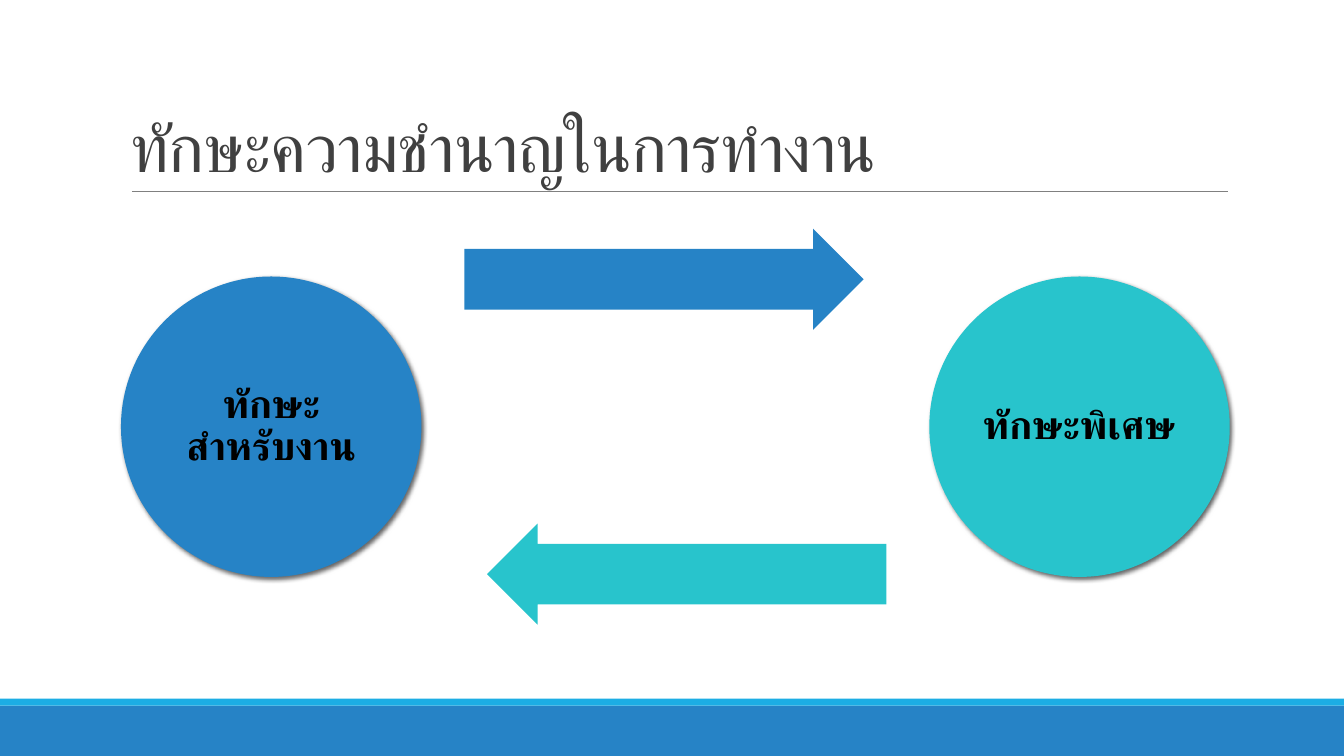
import pptx
import pptx.util
from lxml import etree
from pptx.dml.color import RGBColor
from pptx.enum.shapes import MSO_CONNECTOR, MSO_SHAPE
from pptx.enum.text import MSO_ANCHOR, PP_ALIGN
from pptx.oxml.ns import qn

Pt = pptx.util.Pt
COLORS = {
    "blue": "2683C6",
    "sky": "1CADE4",
    "teal": "28C4CC",
    "rule": "808080",
    "title": "404040",
    "label": "000000",
    "shadow": "000000",
}
WIDTH, HEIGHT = 960, 540


def rgb(name):
    return RGBColor.from_string(COLORS[name])


def add_filled(s, kind, color, x, y, w, h):
    sp = s.shapes.add_shape(kind, Pt(x), Pt(y), Pt(w), Pt(h))
    sp.shadow.inherit = False
    sp.fill.solid()
    sp.fill.fore_color.rgb = rgb(color)
    sp.line.fill.background()
    return sp


def set_text(sp, text, size, color, spacing, anchor):
    tf = sp.text_frame
    tf.word_wrap = True
    tf.vertical_anchor = anchor
    p = tf.paragraphs[0]
    p.text = text
    p.line_spacing = spacing
    p.font.name = "Calibri"
    p.font.size = Pt(size)
    p.font.color.rgb = rgb(color)
    return tf, p


def add_shadow(sp):
    """Give the shape a soft shadow towards the lower right."""
    effects = sp._element.spPr.find(qn("a:effectLst"))
    shadow = etree.SubElement(
        effects, qn("a:outerShdw"), blurRad=str(Pt(3)), dist=str(Pt(2)),
        dir=str(45 * 60000), algn="ctr", rotWithShape="0")
    color = etree.SubElement(shadow, qn("a:srgbClr"), val=COLORS["shadow"])
    etree.SubElement(color, qn("a:alpha"), val="60000")


def add_footer(s, x, y, w, h):
    stripe = 5
    add_filled(s, MSO_SHAPE.RECTANGLE, "blue", x, y + stripe, w, h - stripe)
    add_filled(s, MSO_SHAPE.RECTANGLE, "sky", x, y, w, stripe)


def add_title(s, text, x, y, w, h):
    """Place the title on the bottom of its box, above a thin rule."""
    inset = 7.8
    bottom = Pt(y + h)
    rule = s.shapes.add_connector(
        MSO_CONNECTOR.STRAIGHT, Pt(x + inset), bottom, Pt(x + w - inset / 6), bottom)
    rule.line.color.rgb = rgb("rule")
    rule.line.width = Pt(0.5)
    etree.SubElement(rule._element.spPr, qn("a:effectLst"))
    box = s.shapes.add_textbox(Pt(x), Pt(y), Pt(w), Pt(h))
    tf, p = set_text(box, text, 48, "title", 0.85, MSO_ANCHOR.BOTTOM)
    p.runs[0].font._element.set("spc", "-50")


def add_circle(s, text, color, x, y, d):
    sp = add_filled(s, MSO_SHAPE.OVAL, color, x, y, d, d)
    add_shadow(sp)
    tf, p = set_text(sp, text, 28, "label", 0.9, MSO_ANCHOR.MIDDLE)
    tf.margin_left = tf.margin_right = tf.margin_top = tf.margin_bottom = Pt(2.8)
    p.alignment = PP_ALIGN.CENTER
    p.font.bold = True


def add_arrow(s, color, x, y, w, h, rotation=0):
    sp = add_filled(s, MSO_SHAPE.RIGHT_ARROW, color, x, y, w, h)
    sp.adjustments[0] = 0.6
    sp.adjustments[1] = 0.5
    sp.rotation = rotation


def add_cycle(s, x, y, w, h):
    """Two circles at the sides, with arrows running there and back."""
    d, arrow_w, arrow_h = 214.6, 285.2, 72.2
    circle_y = y + (h - d) / 2
    add_circle(s, "ทักษะสำหรับงาน", "blue", x, circle_y, d)
    add_arrow(s, "blue", x + 245.3, y, arrow_w, arrow_h)
    add_circle(s, "ทักษะพิเศษ", "teal", x + w - d, circle_y, d)
    add_arrow(s, "teal", x + w - 245.3 - arrow_w, y + h - arrow_h,
              arrow_w, arrow_h, rotation=180)


def main():
    prs = pptx.Presentation()
    prs.slide_width, prs.slide_height = Pt(WIDTH), Pt(HEIGHT)
    s = prs.slides.add_slide(prs.slide_layouts[6])
    add_footer(s, 0, 499, WIDTH, HEIGHT - 499)
    add_title(s, "ทักษะความชำนาญในการทำงาน", 86.4, 22.6, 792, 114.2)
    add_cycle(s, 86.4, 163.4, 792, 282.8)
    prs.save("out.pptx")


if __name__ == "__main__":
    main()
